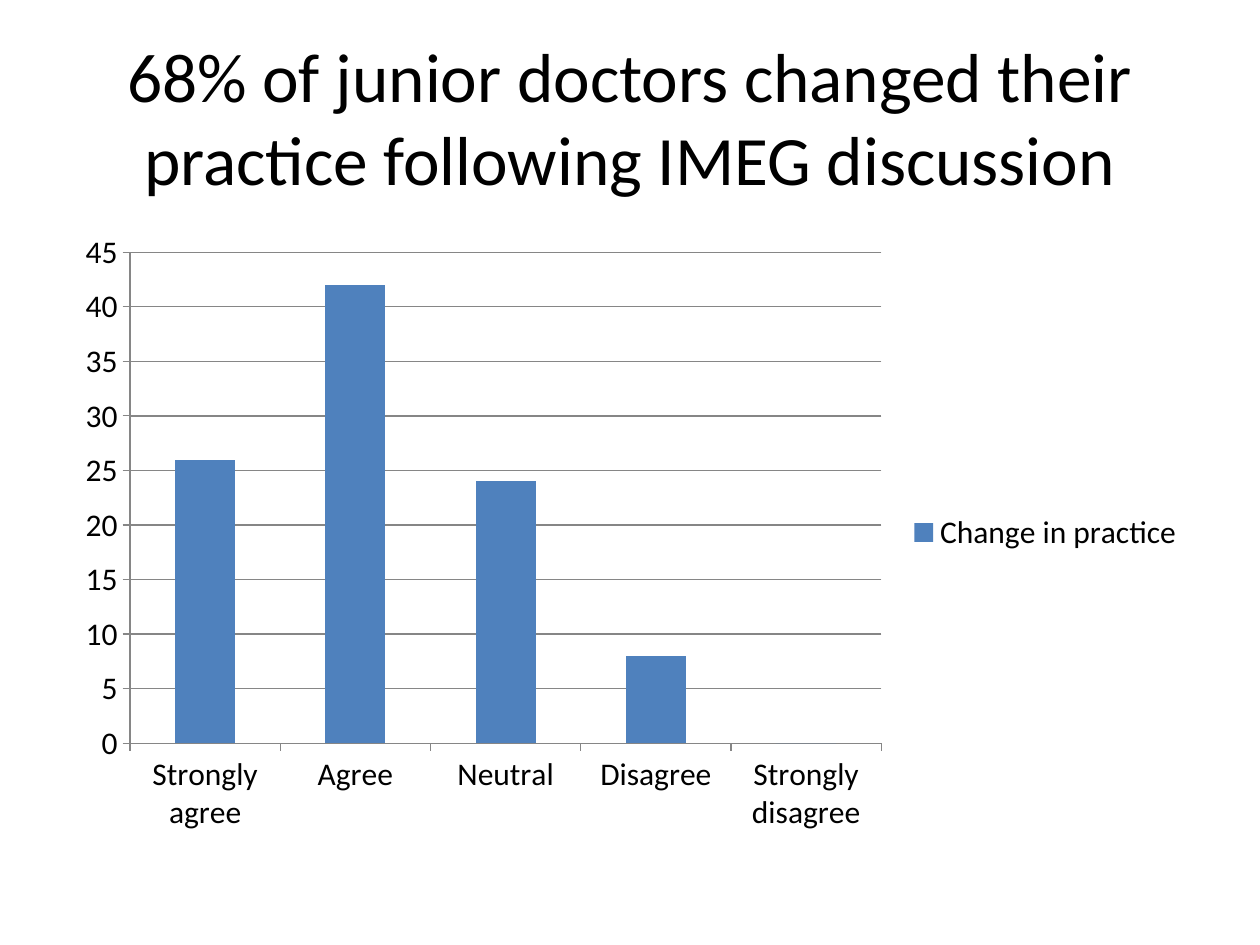
from dataclasses import dataclass

from pptx import Presentation
from pptx.chart.data import CategoryChartData
from pptx.dml.color import RGBColor
from pptx.enum.chart import XL_CHART_TYPE, XL_LEGEND_POSITION, XL_TICK_MARK
from pptx.enum.text import MSO_ANCHOR, PP_ALIGN
from pptx.util import Cm, Pt

COLUMNS = XL_CHART_TYPE.COLUMN_CLUSTERED
LEGEND_RIGHT = XL_LEGEND_POSITION.RIGHT
TICK_OUTSIDE = XL_TICK_MARK.OUTSIDE
TICK_NONE = XL_TICK_MARK.NONE
MIDDLE = MSO_ANCHOR.MIDDLE
CENTER = PP_ALIGN.CENTER

FONT = "Calibri"
COLORS = {"page": "FFFFFF", "text": "000000", "bar": "4F81BD", "line": "868686"}


@dataclass
class Answer:
    label: str
    percent: int


ANSWERS = [
    Answer("Strongly agree", 26),
    Answer("Agree", 42),
    Answer("Neutral", 24),
    Answer("Disagree", 8),
    Answer("Strongly disagree", 0),
]


def color(name: str) -> RGBColor:
    return RGBColor.from_string(COLORS[name])


def style_font(font, size: float) -> None:
    font.name = FONT
    font.size = Pt(size)
    font.bold = False
    font.color.rgb = color("text")


def style_line(line) -> None:
    line.color.rgb = color("line")
    line.width = Pt(0.75)


def add_title(page, text: str) -> None:
    box = page.shapes.add_textbox(Cm(1.27), Cm(0.76), Cm(22.86), Cm(3.18))
    frame = box.text_frame
    frame.word_wrap = True
    frame.vertical_anchor = MIDDLE
    para = frame.paragraphs[0]
    para.text = text
    para.alignment = CENTER
    style_font(para.font, 39.6)


def add_answer_chart(page, series_name: str, answers: list[Answer]) -> None:
    data = CategoryChartData()
    data.categories = [answer.label for answer in answers]
    data.add_series(series_name, [answer.percent for answer in answers])
    chart = page.shapes.add_chart(
        COLUMNS, Cm(1.27), Cm(4.45), Cm(22.86), Cm(12.57), data
    ).chart
    style_font(chart.font, 18)
    chart.has_title = False

    # Legend
    chart.has_legend = True
    chart.legend.position = LEGEND_RIGHT
    chart.legend.include_in_layout = False

    # Bars
    plot = chart.plots[0]
    plot.gap_width = 150
    plot.vary_by_categories = False
    series = plot.series[0]
    series.invert_if_negative = False
    series.format.fill.solid()
    series.format.fill.fore_color.rgb = color("bar")

    # Axes and gridlines
    for axis in (chart.category_axis, chart.value_axis):
        axis.major_tick_mark = TICK_OUTSIDE
        axis.minor_tick_mark = TICK_NONE
        style_line(axis.format.line)
    chart.value_axis.minimum_scale = 0
    chart.value_axis.maximum_scale = 45
    chart.value_axis.major_unit = 5
    chart.value_axis.has_major_gridlines = True
    style_line(chart.value_axis.major_gridlines.format.line)


def main() -> None:
    deck = Presentation()
    deck.slide_width, deck.slide_height = Cm(25.4), Cm(19.05)
    page = deck.slides.add_slide(deck.slide_layouts[6])
    page.background.fill.solid()
    page.background.fill.fore_color.rgb = color("page")

    add_title(
        page, "68% of junior doctors changed their practice following IMEG discussion"
    )
    add_answer_chart(page, "Change in practice", ANSWERS)
    deck.save("out.pptx")


if __name__ == "__main__":
    main()
